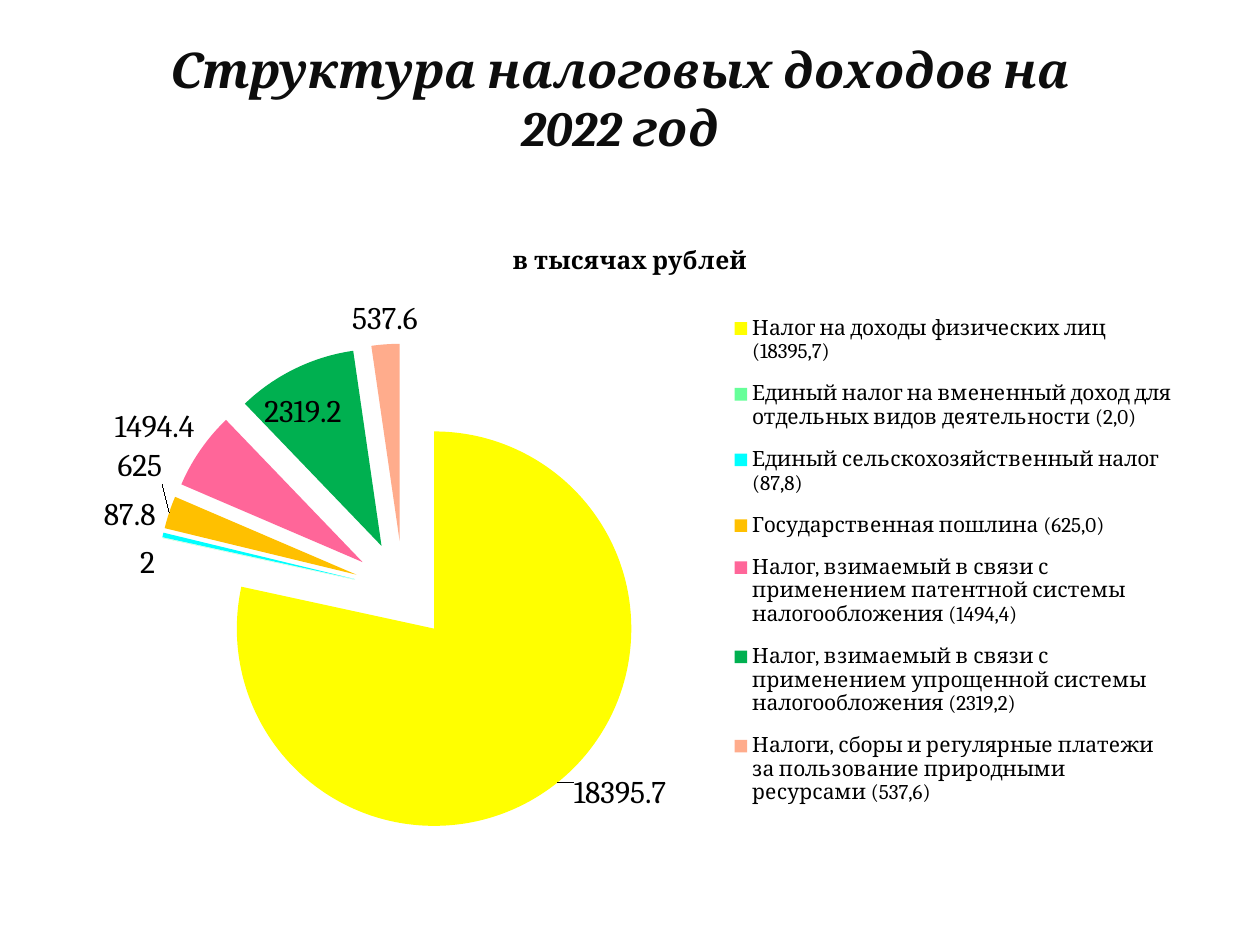
from lxml import etree
from pptx import Presentation
from pptx import util as u
from pptx.chart.data import CategoryChartData
from pptx.dml.color import RGBColor
from pptx.enum import chart as ch
from pptx.enum import text
from pptx.oxml import parse_xml
from pptx.oxml.ns import nsdecls, qn

FONT = "Cambria"
INK = RGBColor(0x0D, 0x0D, 0x0D)
BLACK = RGBColor(0, 0, 0)
UNIT = "в тысячах рублей"
TAXES = [
    ("Налог на доходы физических лиц (18395,7)", 18395.7,
     RGBColor(0xFF, 0xFF, 0x00)),
    ("Единый налог на вмененный доход для отдельных видов деятельности (2,0)",
     2, RGBColor(0x66, 0xFF, 0x99)),
    ("Единый сельскохозяйственный налог (87,8)", 87.8,
     RGBColor(0x00, 0xFF, 0xFF)),
    ("Государственная пошлина (625,0)", 625, RGBColor(0xFF, 0xC0, 0x00)),
    ("Налог, взимаемый в связи с применением патентной системы "
     "налогообложения (1494,4)", 1494.4, RGBColor(0xFF, 0x66, 0x99)),
    ("Налог, взимаемый в связи с применением упрощенной системы "
     "налогообложения (2319,2)", 2319.2, RGBColor(0x00, 0xB0, 0x50)),
    ("Налоги, сборы и регулярные платежи за пользование природными "
     "ресурсами (537,6)", 537.6, RGBColor(0xFF, 0xAC, 0x8C)),
]
SHIFTS = {0: (0.01, -0.02), 1: (0, 0.07), 2: (0, 0), 3: (0, -0.04)}


def style(font, size, bold=False, color=BLACK):
    """Set the face, size, weight and colour of a font."""
    font.name, font.size, font.bold = FONT, u.Pt(size), bold
    font.color.rgb = color


def layout(**parts):
    """Make a manual layout element from its named parts."""
    body = "".join(f'<c:{key} val="{val}"/>' for key, val in parts.items())
    return parse_xml(f'<c:layout {nsdecls("c")}><c:manualLayout>{body}'
                     '</c:manualLayout></c:layout>')


def place(node, index, **parts):
    """Give a chart part a manual layout as its child at an index."""
    for old in node.findall(qn("c:layout")):
        node.remove(old)
    node.insert(index, layout(**parts))


def add_title(slide, left, top, width, height):
    """Fill the title placeholder in the given box."""
    title = slide.shapes.title
    title.left, title.top, title.width, title.height = left, top, width, height
    title._element.spPr.append(parse_xml(
        f'<a:prstGeom {nsdecls("a")} prst="roundRect"><a:avLst>'
        '<a:gd name="adj" fmla="val 0"/></a:avLst></a:prstGeom>'))
    frame = title.text_frame
    frame.text = "Структура налоговых доходов на 2022 год"
    frame.word_wrap = True
    frame.auto_size = text.MSO_AUTO_SIZE.NONE
    frame.vertical_anchor = text.MSO_ANCHOR.TOP
    frame.margin_top = 0
    frame.margin_left = frame.margin_right = u.Inches(0.25)
    line = frame.paragraphs[0]
    line.alignment = text.PP_ALIGN.CENTER
    font = line.runs[0].font
    style(font, 28, True, INK)
    font.italic = True


def add_labels(series):
    """Show the values beside the slices, with leader lines."""
    labels = series.data_labels
    labels.show_value = True
    labels.number_format, labels.number_format_is_linked = "General", False
    labels.position = ch.XL_LABEL_POSITION.BEST_FIT
    style(labels.font, 18)
    for index in SHIFTS:
        label = series.points[index].data_label
        style(label.font, 18)
        label.position = ch.XL_LABEL_POSITION.BEST_FIT
    root = labels._element
    for node in root.findall(qn("c:dLbl")):
        x, y = SHIFTS[int(node.find(qn("c:idx")).get("val"))]
        place(node, 1, x=x, y=y)
    lead = root.find(qn("c:showLeaderLines"))
    if lead is None:
        lead = etree.SubElement(root, qn("c:showLeaderLines"))
    lead.set("val", "1")


def add_pie(slide, left, top, width, height):
    """Draw the exploded pie with its title and legend in the given box."""
    data = CategoryChartData()
    data.categories = [name for name, _, _ in TAXES]
    data.add_series(UNIT, [value for _, value, _ in TAXES])
    chart = slide.shapes.add_chart(
        ch.XL_CHART_TYPE.PIE, left, top, width, height, data).chart
    style(chart.font, 18)
    chart.has_title = True
    head = chart.chart_title
    head.text_frame.text = UNIT
    style(head.text_frame.paragraphs[0].runs[0].font, 14, True)
    head.include_in_layout = False
    chart.has_legend = True
    legend = chart.legend
    legend.position = ch.XL_LEGEND_POSITION.RIGHT
    legend.include_in_layout = False
    style(legend.font, 12)
    place(legend._element, 1, xMode="edge", yMode="edge",
          x=0.59, y=0.12, w=0.39, h=0.81)
    plot = chart.plots[0]
    plot.vary_by_categories = True
    series = plot.series[0]
    for index, (_, _, color) in enumerate(TAXES):
        fill = series.points[index].format.fill
        fill.solid()
        fill.fore_color.rgb = color
    burst = f'<c:explosion {nsdecls("c")} val="25"/>'
    points = series._element.findall(qn("c:dPt"))
    points[0].addprevious(parse_xml(burst))
    for point in points:
        point.find(qn("c:spPr")).addprevious(parse_xml(burst))
    add_labels(series)
    area = chart._chartSpace.chart.plotArea
    place(area, 0, layoutTarget="inner", xMode="edge", yMode="edge",
          x=0.08, y=0.19, w=0.44, h=0.76)


def main():
    """Build the slide and save it."""
    deck = Presentation()
    deck.slide_width, deck.slide_height = u.Inches(10), u.Inches(7.5)
    slide = deck.slides.add_slide(deck.slide_layouts[5])
    add_title(slide, u.Inches(0.78), u.Inches(0.31),
              u.Inches(8.28), u.Inches(1.41))
    add_pie(slide, u.Inches(0.5), u.Inches(1.75), u.Inches(9), u.Inches(5.15))
    deck.save("out.pptx")


if __name__ == "__main__":
    main()
